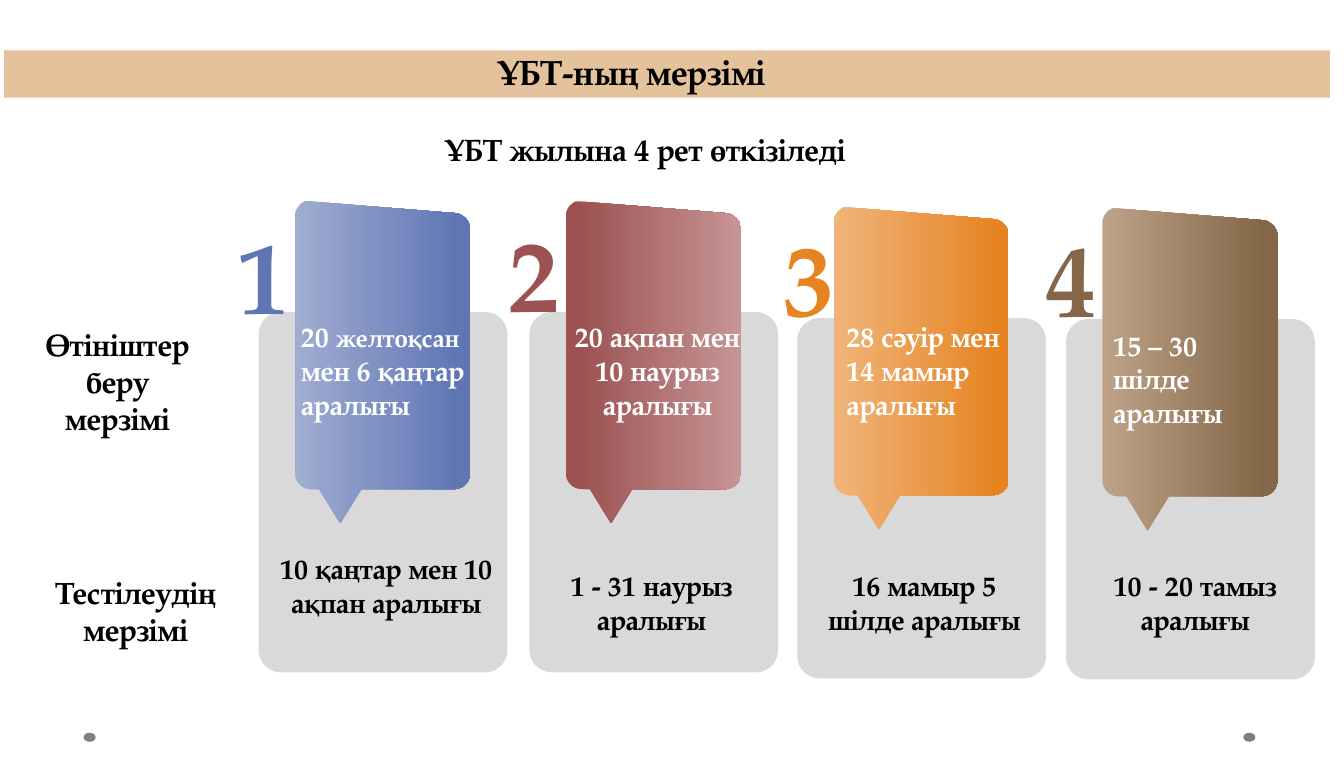
import pptx
import pptx.dml.color
import pptx.enum.shapes
import pptx.enum.text
import pptx.util

Inches = pptx.util.Inches
Pt = pptx.util.Pt
SHAPES = pptx.enum.shapes.MSO_SHAPE
LEFT = pptx.enum.text.PP_ALIGN.LEFT
CENTER = pptx.enum.text.PP_ALIGN.CENTER


def rgb(hex_color):
    return pptx.dml.color.RGBColor.from_string(hex_color)


def bezier(start, pull_out, pull_in, end, steps=10):
    """Points of a cubic curve after its start."""
    points = []
    for step in range(1, steps + 1):
        t = step / steps
        weights = ((1 - t) ** 3, 3 * t * (1 - t) ** 2, 3 * t * t * (1 - t), t ** 3)
        controls = (start, pull_out, pull_in, end)
        points.append(tuple(sum(w * c[axis] for w, c in zip(weights, controls))
                            for axis in (0, 1)))
    return points


# Slanted top, rounded corners and a pointer below, measured from the top left.
CALLOUT = [
    (0.13, 0), (1.62, 0.12), (1.64, 0.13),
    *bezier((1.64, 0.13), (1.7, 0.16), (1.74, 0.21), (1.74, 0.28)),
    (1.74, 2.7),
    *bezier((1.74, 2.7), (1.74, 2.79), (1.67, 2.86), (1.58, 2.86)),
    (0.66, 2.86), (0.45, 3.2), (0.24, 2.86), (0.16, 2.86),
    *bezier((0.16, 2.86), (0.07, 2.86), (0, 2.79), (0, 2.7)),
    (0, 0.15),
    *bezier((0, 0.15), (0, 0.08), (0.04, 0.03), (0.1, 0)),
]


class ScheduleSlide:
    font = "TeX Gyre Pagella"

    def __init__(self, presentation):
        self.shapes = presentation.slides.add_slide(presentation.slide_layouts[6]).shapes

    def block(self, kind, box, color, rounding=None):
        block = self.shapes.add_shape(kind, *map(Inches, box))
        block.shadow.inherit = False
        block.fill.solid()
        block.fill.fore_color.rgb = rgb(color)
        block.line.fill.background()
        if rounding is not None:
            block.adjustments[0] = rounding

    def callout(self, left, top, stops):
        outline = [(Inches(left + x), Inches(top + y)) for x, y in CALLOUT]
        builder = self.shapes.build_freeform(*outline[0])
        builder.add_line_segments(outline[1:], close=True)
        callout = builder.convert_to_shape()
        callout.shadow.inherit = False
        callout.line.fill.background()
        callout.fill.gradient()
        callout.fill.gradient_angle = 0
        for stop, (position, color) in zip(callout.fill.gradient_stops, stops):
            stop.position = position
            stop.color.rgb = rgb(color)

    def text(self, box, pieces, size, color="000000", align=CENTER, wrap=True):
        """Pieces are a string, or (string, size) pairs where sizes differ."""
        frame = self.shapes.add_textbox(*map(Inches, box)).text_frame
        frame.word_wrap = wrap
        frame.auto_size = pptx.enum.text.MSO_AUTO_SIZE.SHAPE_TO_FIT_TEXT
        paragraph = frame.paragraphs[0]
        paragraph.alignment = align
        paragraph.font.name = self.font
        paragraph.font.size = Pt(size)
        paragraph.font.bold = True
        paragraph.font.color.rgb = rgb(color)
        if isinstance(pieces, str):
            pieces = [(pieces, size)]
        for words, words_size in pieces:
            run = paragraph.add_run()
            run.text = words
            if words_size != size:
                run.font.size = Pt(words_size)


# Panel left and top, gradient stops, number colour and place,
# application dates (box, alignment), testing dates (box).
ROUNDS = [
    (2.57, 3.1, [(0, "A0ADD2"), (0.93, "6076B4")], "6076B4", (2.26, 2.06),
     [("20 ", 20), ("желтоқсан ", 18), ("мен 6 қаңтар аралығы", 20)],
     (2.89, 3.13, 1.99, 1.45), LEFT,
     "10 қаңтар мен 10 ақпан аралығы", (2.63, 5.43, 2.41, 1.11)),
    (5.26, 3.1, [(0.07, "9C5252"), (1, "C79494")], "9C5252", (4.95, 2.04),
     "20 ақпан мен 10 наурыз аралығы", (5.56, 3.13, 1.94, 1.45), CENTER,
     "1 - 31 наурыз аралығы", (5.28, 5.6, 2.38, 0.78)),
    (7.92, 3.16, [(0, "F0B57A"), (0.93, "E68422")], "E68422", (7.68, 2.08),
     "28 сәуір мен 14 мамыр аралығы", (8.31, 3.13, 1.74, 1.45), LEFT,
     "16 мамыр 5 шілде аралығы", (8, 5.6, 2.36, 0.78)),
    (10.59, 3.17, [(0, "BEA388"), (0.93, "846648")], "846648", (10.29, 2.09),
     "15 – 30 шілде аралығы", (10.96, 3.21, 1.74, 1.11), LEFT,
     "10 - 20 тамыз аралығы", (10.59, 5.6, 2.56, 0.78)),
]


def main():
    presentation = pptx.Presentation()
    presentation.slide_width = Inches(13.35)
    presentation.slide_height = Inches(7.68)
    slide = ScheduleSlide(presentation)

    for dot_left in (12.35, 0.83):
        slide.block(SHAPES.OVAL, (dot_left, 7.28, 0.12, 0.09), "808080")

    for number, (left, top, stops, color, number_at, applying, applying_box,
                 applying_align, testing, testing_box) in enumerate(ROUNDS, 1):
        slide.block(SHAPES.ROUNDED_RECTANGLE, (left, top, 2.47, 3.58), "D9D9D9", 0.09)
        slide.callout(left + 0.36, top - 1.1, stops)
        slide.text(applying_box, applying, 20, "FFFFFF", applying_align)
        slide.text(testing_box, testing, 20)
        slide.text((*number_at, 0.72, 1.33), str(number), 73, color, LEFT, wrap=False)

    slide.text((0.24, 3.19, 1.85, 1.21), "Өтініштер беру мерзімі", 22)
    slide.text((0.12, 5.65, 2.45, 0.84), "Тестілеудің мерзімі", 22)

    slide.block(SHAPES.RECTANGLE, (0.04, 0.5, 13.17, 0.47), "E4C29C")
    slide.text((4.84, 0.45, 3.2, 0.52), "ҰБТ-ның мерзімі", 25, align=LEFT, wrap=False)
    slide.text((4.09, 1.25, 4.71, 0.47), "ҰБТ жылына 4 рет өткізіледі ", 22, wrap=False)

    presentation.save("out.pptx")


if __name__ == "__main__":
    main()
